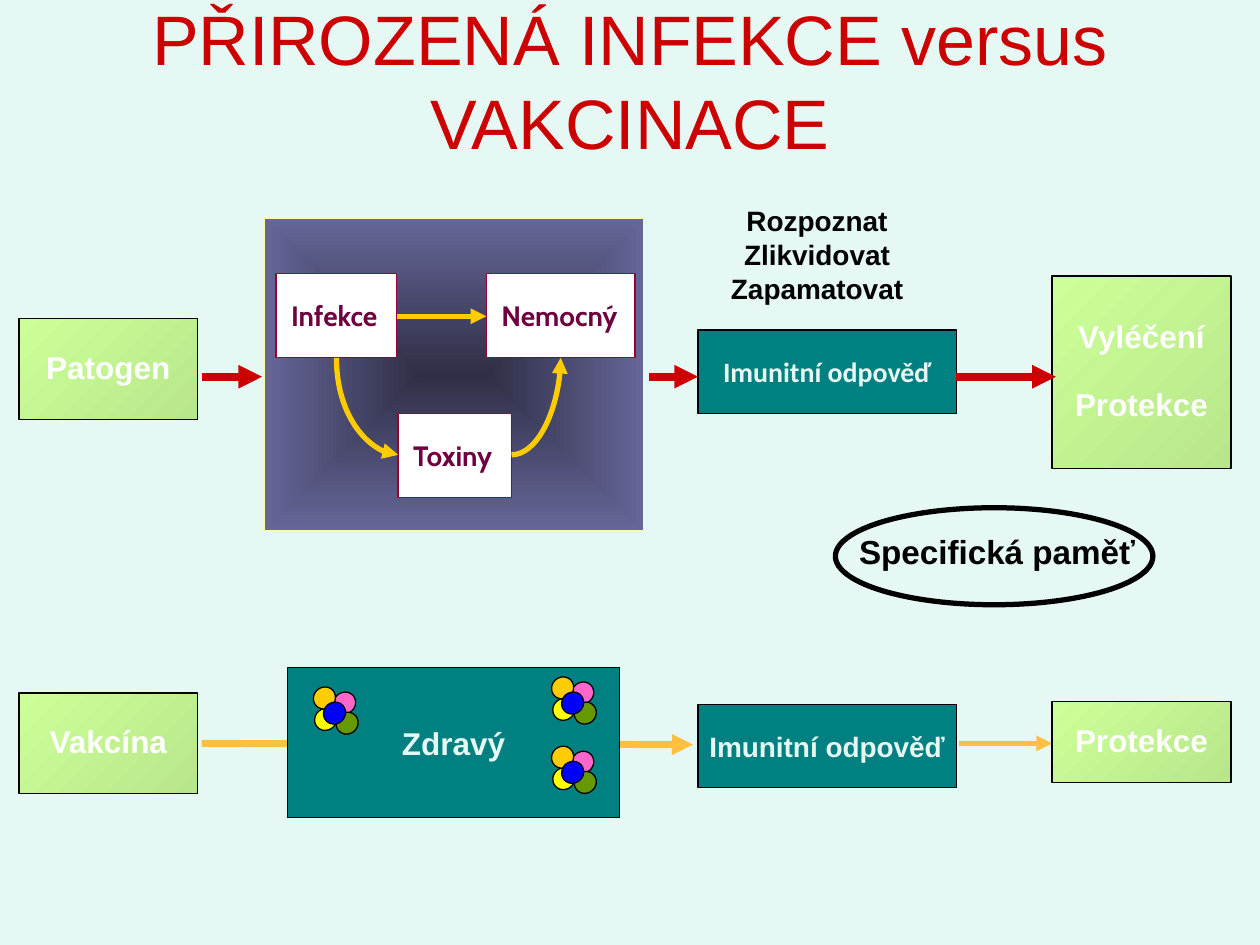
from lxml.etree import SubElement
from pptx import Presentation
from pptx.dml.color import RGBColor
from pptx.enum.shapes import MSO_CONNECTOR as Link, MSO_SHAPE as Shape
from pptx.enum.text import MSO_ANCHOR as Anchor, MSO_AUTO_SIZE as Fit, PP_ALIGN as Align
from pptx.oxml.ns import qn
from pptx.util import Inches, Pt

TITLE = "PŘIROZENÁ INFEKCE versus VAKCINACE"
BLACK, WHITE, PALE, TEAL = "000000", "FFFFFF", "E6F8F4", "008080"
RED, GOLD, ORANGE, PLUM = "CC0000", "FFCC00", "FFBF3F", "6F003F"
GREEN_FADE = ("CCFF99", "B8E68A")
DARK_FADE = ("2F2F47", "666699")

GREEN = dict(fill=GREEN_FADE, color=WHITE, size=18, wrap=False, spacing=0.9)
RESPONSE = dict(fill=TEAL, color=PALE, size=16, insets=(0, 0))
STAGE = dict(fill=WHITE, line="990033", color=PLUM, size=16, font="Cabin",
             align=Align.LEFT, wrap=False, insets=(0.12, 0.2))
LABEL = dict(color=BLACK, line=None, anchor=Anchor.TOP, wrap=False)

START_X, RESPONSE_X, END_X = 0.15, 5.54, 8.35
SIDE_W, RESPONSE_W = 1.42, 2.05
INFECTION_Y, VACCINE_Y = 2.99, 5.9

INFECTION_BOXES = [
    (["Patogen"], (START_X, 2.53, SIDE_W, 0.8), GREEN),
    (["Imunitní odpověď"], (RESPONSE_X, 2.62, RESPONSE_W, 0.66), RESPONSE | dict(font="Calibri")),
    (["Vyléčení", "Protekce"], (END_X, 2.19, SIDE_W, 1.53), GREEN | dict(gap=19)),
    ([], (2.1, 1.73, 3.01, 2.48), dict(fill=DARK_FADE, line="FFFF99", radial=True)),
    (["Nemocný"], (3.86, 2.17, 1.18, 0.67), STAGE),
    (["Toxiny"], (3.16, 3.28, 0.9, 0.67), STAGE),
    (["Infekce"], (2.19, 2.17, 0.96, 0.67), STAGE),
]
STAGE_ARROWS = [
    ((3.15, 2.51), (3.86, 2.51), GOLD, 3, {}),
    ((3.3, 2.98), (2.53, 3.47), GOLD, 3, dict(curved=True, turn=270)),
    ((4.06, 3.61), (4.45, 2.84), GOLD, 3, dict(curved=True)),
]
VACCINE_ARROWS = [
    ((1.6, VACCINE_Y), (5.5, VACCINE_Y + 0.01), ORANGE, 4, {}),
    ((7.61, VACCINE_Y), (END_X, VACCINE_Y), ORANGE, 3, {}),
]
VACCINE_BOXES = [
    (["Specifická paměť"], (6.72, 4.17, 2.42, 0.42), LABEL | dict(size=19, align=Align.LEFT)),
    (["Vakcína"], (START_X, 5.5, SIDE_W, 0.8), GREEN),
    (["Protekce"], (END_X, 5.57, SIDE_W, 0.64), GREEN),
    ([], (6.63, 4.03, 2.52, 0.77), dict(kind=Shape.OVAL, weight=3)),
    (["Zdravý"], (2.28, 5.3, 2.64, 1.19), RESPONSE | dict(size=18)),
    (["Rozpoznat", "Zlikvidovat", "Zapamatovat"], (5.7, 1.57, 1.57, 0.9), LABEL | dict(size=16)),
    (["Imunitní odpověď"], (RESPONSE_X, 5.59, RESPONSE_W, 0.66), RESPONSE),
]
INFECTION_ARROWS = [
    ((left, INFECTION_Y), (right, INFECTION_Y), RED, 4.5, {})
    for left, right in [(1.6, 2.08), (5.15, 5.54), (7.59, 8.38)]
]
ANTIGENS = [(4.38, 5.92), (2.49, 5.45), (4.38, 5.37)]
DOTS = [(0.01, 0.17, "FFFF00"), (0.16, 0.04, "FF66CC"), (0.18, 0.2, "669900"),
        (0, 0, GOLD), (0.08, 0.12, "0000FF")]


def rgb(value):
    return RGBColor.from_string(value)


def apply(target, **values):
    for name, value in values.items():
        setattr(target, name, value)


def paint(shape, fill, radial):
    if fill is None:
        shape.fill.background()
    elif isinstance(fill, str):
        shape.fill.solid()
        shape.fill.fore_color.rgb = rgb(fill)
    else:
        shape.fill.gradient()
        shape.fill.gradient_angle = 315
        for stop, color in zip(shape.fill.gradient_stops, fill):
            stop.color.rgb = rgb(color)
        if radial:
            gradient = shape._element.spPr.find(qn("a:gradFill"))
            gradient.remove(gradient.find(qn("a:lin")))
            focus = SubElement(gradient, qn("a:path"), {"path": "shape"})
            SubElement(focus, qn("a:fillToRect"), dict.fromkeys("ltrb", "50000"))


def write(shape, lines, size, color, font="Arial", bold=True, align=Align.CENTER,
          anchor=Anchor.MIDDLE, wrap=True, insets=(0.1, 0.05), spacing=None, gap=0):
    frame = shape.text_frame
    side, edge = map(Inches, insets)
    apply(frame, word_wrap=wrap, auto_size=Fit.NONE, vertical_anchor=anchor,
          margin_left=side, margin_right=side, margin_top=edge, margin_bottom=edge)
    for index, line in enumerate(lines):
        para = frame.add_paragraph() if index else frame.paragraphs[0]
        apply(para, alignment=align, line_spacing=spacing)
        if index and gap:
            para.space_before = Pt(gap)
        span = para.add_run()
        span.text = line
        apply(span.font, size=Pt(size), name=font, bold=bold)
        span.font.color.rgb = rgb(color)


def add_box(page, lines, place, fill=None, line=BLACK, weight=0.75,
            kind=Shape.RECTANGLE, radial=False, **style):
    place = map(Inches, place)
    if fill is None and line is None:
        box = page.shapes.add_textbox(*place)
    else:
        box = page.shapes.add_shape(kind, *place)
        box.shadow.inherit = False
        paint(box, fill, radial)
        box.line.color.rgb = rgb(line)
        box.line.width = Pt(weight)
    if lines:
        write(box, lines, **style)
    return box


def add_arrow(page, start, end, color, weight, curved=False, turn=0):
    kind = Link.CURVE if curved else Link.STRAIGHT
    arrow = page.shapes.add_connector(kind, *map(Inches, start + end))
    arrow.line.color.rgb = rgb(color)
    arrow.line.width = Pt(weight)
    outline = arrow._element.spPr
    SubElement(outline.find(qn("a:ln")), qn("a:tailEnd"), {"type": "triangle"})
    SubElement(outline, qn("a:effectLst"))
    if curved:
        outline.find(qn("a:prstGeom")).set("prst", "curvedConnector2")
    if turn:
        outline.find(qn("a:xfrm")).set("rot", str(turn * 60000))


def main():
    deck = Presentation()
    apply(deck, slide_width=Inches(10), slide_height=Inches(7.5))
    page = deck.slides.add_slide(deck.slide_layouts[5])
    page.background.fill.solid()
    page.background.fill.fore_color.rgb = rgb(PALE)
    title = page.shapes.title
    apply(title, left=0, top=0, width=deck.slide_width, height=Inches(1.26))
    write(title, [TITLE], size=40, color=RED, bold=False)

    for boxes, arrows in [(INFECTION_BOXES, STAGE_ARROWS + VACCINE_ARROWS),
                          (VACCINE_BOXES, INFECTION_ARROWS)]:
        for lines, place, style in boxes:
            add_box(page, lines, place, **style)
        for start, end, color, weight, bend in arrows:
            add_arrow(page, start, end, color, weight, **bend)
    for left, top in ANTIGENS:
        for across, down, color in DOTS:
            dot = add_box(page, [], (left + across, top + down, 0.17, 0.18),
                          fill=color, kind=Shape.OVAL)
            dot.rotation = 48
    deck.save("out.pptx")


if __name__ == "__main__":
    main()
